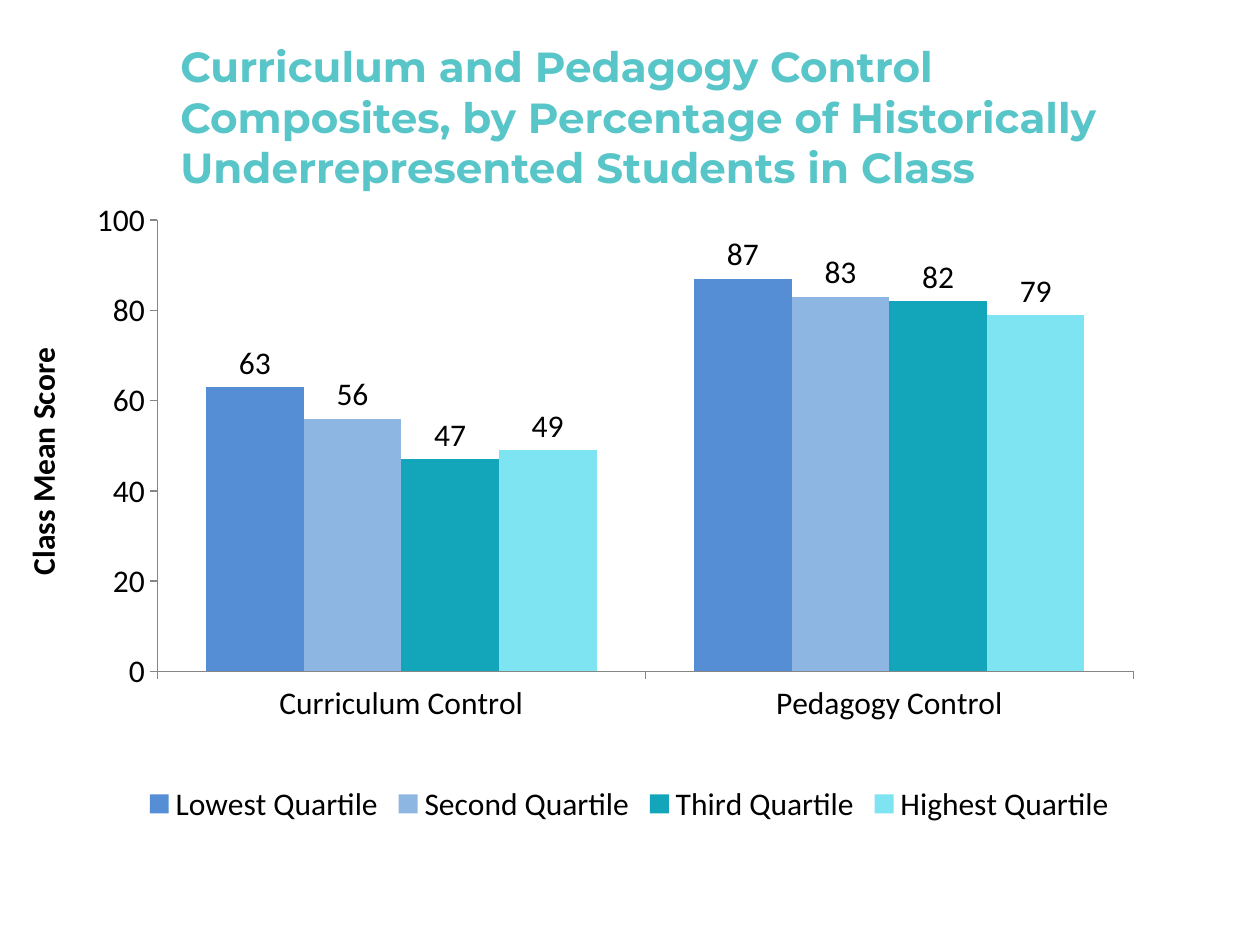
import dataclasses

import lxml.etree
import pptx
import pptx.chart.data
import pptx.dml.color
import pptx.enum.chart
import pptx.enum.text
import pptx.oxml
import pptx.oxml.ns
import pptx.util

Cm = pptx.util.Cm
Pt = pptx.util.Pt
RGB = pptx.dml.color.RGBColor.from_string
qn = pptx.oxml.ns.qn


@dataclasses.dataclass(frozen=True)
class Theme:
    title_font: str = "Montserrat"
    chart_font: str = "Calibri"
    title_size: int = 24
    chart_size: int = 18
    title_color: str = "58C5C9"
    text_color: str = "000000"
    axis_color: str = "868686"


THEME = Theme()
TITLE = ("Curriculum and Pedagogy Control Composites, by Percentage of "
         "Historically Underrepresented Students in Class")
CATEGORIES = ["Curriculum Control", "Pedagogy Control"]
QUARTILES = [
    ("Lowest Quartile", (63, 87), "558ED5"),
    ("Second Quartile", (56, 83), "8EB6E3"),
    ("Third Quartile", (47, 82), "13A6BA"),
    ("Highest Quartile", (49, 79), "7FE4F2"),
]
PLOT_AREA = {"x": 0.119, "y": 0.039, "w": 0.788, "h": 0.712}


def style_font(font, name, size, color, bold=False):
    font.name = name
    font.size = Pt(size)
    font.bold = bold
    font.color.rgb = RGB(color)


def set_title(s):
    sp = s.shapes.title
    sp.left, sp.top, sp.width, sp.height = Cm(3.38), Cm(0.76), Cm(20.75), Cm(3.18)
    tf = sp.text_frame
    tf.word_wrap = True
    tf.vertical_anchor = pptx.enum.text.MSO_ANCHOR.MIDDLE
    p = tf.paragraphs[0]
    p.alignment = pptx.enum.text.PP_ALIGN.LEFT
    r = p.add_run()
    r.text = TITLE
    style_font(r.font, THEME.title_font, THEME.title_size, THEME.title_color, True)


def set_plot_area(chart):
    plot_area = chart.element.find(".//" + qn("c:plotArea"))
    layout = plot_area.find(qn("c:layout"))
    if layout is None:
        layout = lxml.etree.Element(qn("c:layout"))
        plot_area.insert(0, layout)
    manual = lxml.etree.SubElement(layout, qn("c:manualLayout"))
    settings = {"layoutTarget": "inner", "xMode": "edge", "yMode": "edge", **PLOT_AREA}
    for tag, value in settings.items():
        lxml.etree.SubElement(manual, qn("c:" + tag)).set("val", str(value))


def style_axis(axis):
    axis.has_major_gridlines = False
    axis.major_tick_mark = pptx.enum.chart.XL_TICK_MARK.OUTSIDE
    axis.minor_tick_mark = pptx.enum.chart.XL_TICK_MARK.NONE
    axis.format.line.color.rgb = RGB(THEME.axis_color)
    axis.format.line.width = Pt(0.75)


def style_value_axis(axis):
    style_axis(axis)
    axis.minimum_scale, axis.maximum_scale, axis.major_unit = 0, 100, 20
    r = axis.axis_title.text_frame.paragraphs[0].add_run()
    r.text = "Class Mean Score"
    style_font(r.font, THEME.chart_font, THEME.chart_size, THEME.text_color, True)


def style_series(series, color):
    series.format.fill.solid()
    series.format.fill.fore_color.rgb = RGB(color)
    series.invert_if_negative = False
    labels = series.data_labels
    labels.show_value = True
    labels.position = pptx.enum.chart.XL_LABEL_POSITION.OUTSIDE_END


def add_score_chart(s):
    data = pptx.chart.data.CategoryChartData(number_format="0")
    data.categories = CATEGORIES
    for name, scores, _ in QUARTILES:
        data.add_series(name, scores)
    chart = s.shapes.add_chart(
        pptx.enum.chart.XL_CHART_TYPE.COLUMN_CLUSTERED,
        Cm(0.2), Cm(3.94), Cm(24.97), Cm(12.78), data).chart
    style_font(chart.font, THEME.chart_font, THEME.chart_size, THEME.text_color)
    chart.has_title = False
    chart.has_legend = True
    chart.legend.position = pptx.enum.chart.XL_LEGEND_POSITION.BOTTOM
    chart.legend.include_in_layout = False
    plot = chart.plots[0]
    plot.gap_width = 100
    plot.overlap = 0
    plot.vary_by_categories = False
    for series, (_, _, color) in zip(plot.series, QUARTILES):
        style_series(series, color)
    style_axis(chart.category_axis)
    style_value_axis(chart.value_axis)
    set_plot_area(chart)


def main():
    prs = pptx.Presentation()
    prs.slide_width, prs.slide_height = Cm(25.4), Cm(19.05)
    s = prs.slides.add_slide(prs.slide_layouts[5])
    set_title(s)
    add_score_chart(s)
    prs.save("out.pptx")


if __name__ == "__main__":
    main()
